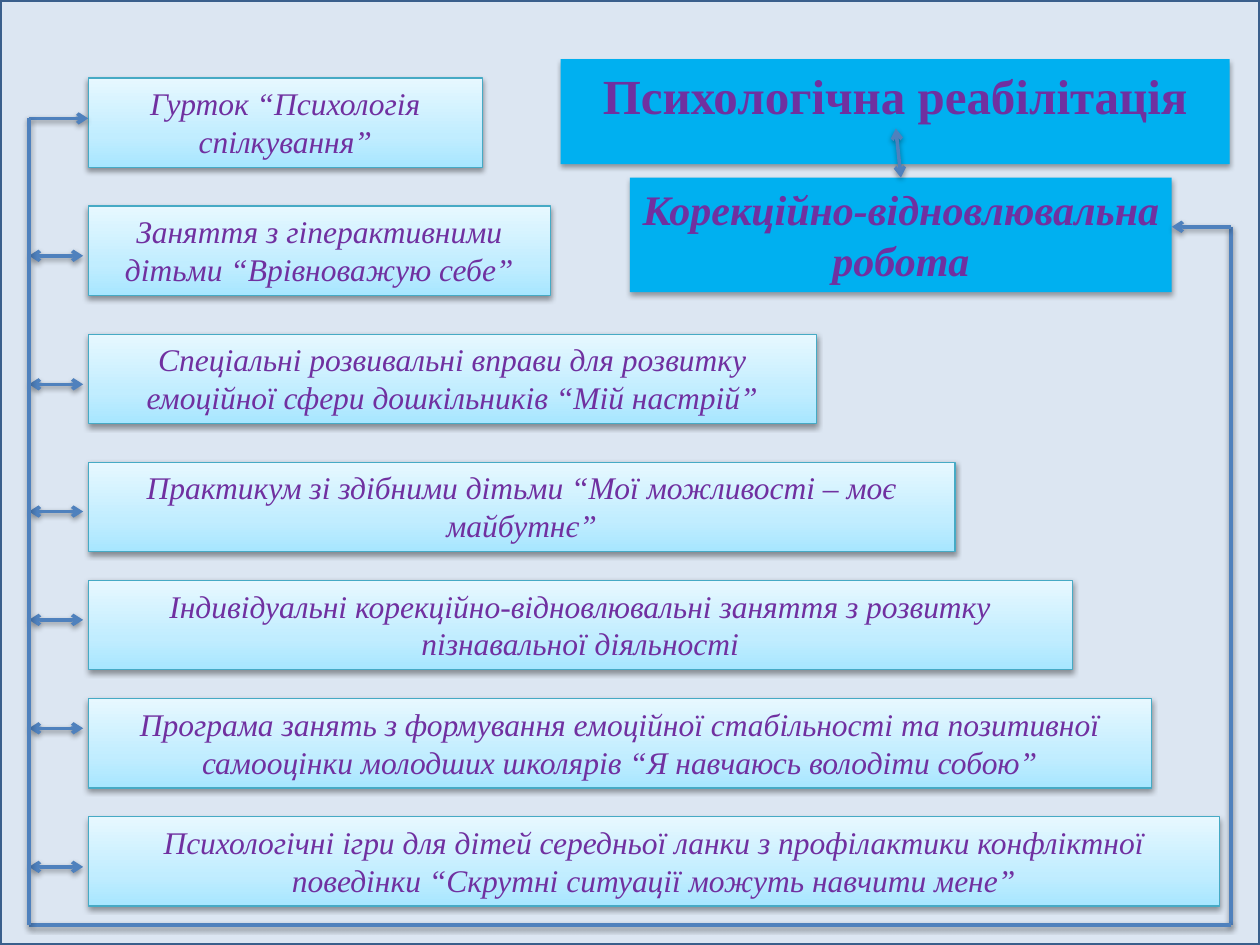
from copy import deepcopy
from dataclasses import dataclass

from lxml import etree
from pptx import Presentation
from pptx import util as u
from pptx.dml.color import RGBColor
from pptx.enum import shapes, text
from pptx.oxml.ns import qn


@dataclass(frozen=True)
class Theme:
    font: str = "Times New Roman"
    ink: str = "7030A0"
    paper: str = "DCE6F2"
    frame: str = "3A5F8C"
    heading: str = "00B0F0"
    edge: str = "46AAC5"
    arrow: str = "4F81BD"
    gradient: tuple = ((0, "A7E6FF"), (0.35, "C1EDFF"), (1, "E7F8FF"))
    title_size: int = 28
    subtitle_size: int = 24
    body_size: int = 18
    line_width: float = 2
    edge_width: float = 0.75


THEME = Theme()
COLUMNS, ROWS = 100, 75
CARD_LEFT, CARD_HEIGHT = 7, 7.1
RAIL_LEFT, RAIL_RIGHT, RAIL_BOTTOM = 2.3, 97.7, 73.4
ARROW_END = 6.6
FIRST_ROW, WIDE_STEP, NARROW_STEP = 6.2, 10.16, 9.38
WIDE_STEPS = 3

ACTIVITIES = [
    (31.3, 9.4, "Гурток “Психологія спілкування”"),
    (36.7, 20.3, "Заняття з гіперактивними дітьми “Врівноважую себе”"),
    (57.8, 30.5, "Спеціальні розвивальні вправи для розвитку емоційної сфери дошкільників “Мій настрій”"),
    (68.8, 40.6, "Практикум зі здібними дітьми “Мої можливості – моє майбутнє”"),
    (78.1, 49.2, "Індивідуальні корекційно-відновлювальні заняття з розвитку пізнавальної діяльності"),
    (84.4, 57.8, "Програма занять з формування емоційної стабільності та позитивної самооцінки молодших школярів “Я навчаюсь володіти собою”"),
    (89.8, 68.8, "Психологічні ігри для дітей середньої ланки з профілактики конфліктної поведінки “Скрутні ситуації можуть навчити мене”"),
]


def color(value):
    return RGBColor.from_string(value)


def apply(target, values):
    for name, value in values.items():
        setattr(target, name, value)


def cell(presentation, *lengths):
    units = (presentation.slide_width / COLUMNS, presentation.slide_height / ROWS)
    return [u.Emu(round(length * units[index % 2])) for index, length in enumerate(lengths)]


def add_shadow(shape, opacity, distance):
    properties = shape._element.spPr
    for old in properties.findall(qn("a:effectLst")):
        properties.remove(old)
    effects = etree.SubElement(properties, qn("a:effectLst"))
    shadow = etree.SubElement(
        effects, qn("a:outerShdw"), blurRad=str(u.Pt(3.15)), dist=str(u.Pt(distance)),
        dir="5400000", rotWithShape="0")
    black = etree.SubElement(shadow, qn("a:srgbClr"), val="000000")
    etree.SubElement(black, qn("a:alpha"), val=str(opacity * 1000))


def fill_gradient(shape):
    shape.fill.gradient()
    shape.fill.gradient_angle = 90
    stops = shape._element.spPr.find(".//" + qn("a:gsLst"))
    stops.append(deepcopy(stops[-1]))
    for stop, (position, value) in zip(shape.fill.gradient_stops, THEME.gradient):
        stop.position = position
        stop.color.rgb = color(value)


def place(presentation, shape, box):
    apply(shape, dict(zip(("left", "top", "width", "height"), cell(presentation, *box))))


def write(shape, wording, size, bold, italic):
    frame = shape.text_frame
    frame.text = wording
    apply(frame, {"word_wrap": True, "vertical_anchor": text.MSO_ANCHOR.TOP,
                  "auto_size": text.MSO_AUTO_SIZE.SHAPE_TO_FIT_TEXT})
    paragraph = frame.paragraphs[0]
    paragraph.alignment = text.PP_ALIGN.CENTER
    font = paragraph.runs[0].font
    apply(font, {"name": THEME.font, "size": u.Pt(size), "bold": bold, "italic": italic})
    font.color.rgb = color(THEME.ink)


def add_background(presentation, slide):
    shape = slide.shapes.add_shape(
        shapes.MSO_SHAPE.RECTANGLE, *cell(presentation, 0, 0, COLUMNS, ROWS))
    shape.shadow.inherit = False
    shape.fill.solid()
    shape.fill.fore_color.rgb = color(THEME.paper)
    shape.line.color.rgb = color(THEME.frame)
    shape.line.width = u.Pt(THEME.line_width)
    slide.shapes._spTree.insert(2, shape._element)


def add_heading(presentation, shape, box, wording, size, italic):
    place(presentation, shape, box)
    shape.fill.solid()
    shape.fill.fore_color.rgb = color(THEME.heading)
    write(shape, wording, size, True, italic)
    add_shadow(shape, 35, 1.8)


def add_card(presentation, slide, box, wording):
    shape = slide.shapes.add_textbox(*cell(presentation, *box))
    fill_gradient(shape)
    shape.line.color.rgb = color(THEME.edge)
    shape.line.width = u.Pt(THEME.edge_width)
    write(shape, wording, THEME.body_size, False, True)
    add_shadow(shape, 38, 1.6)


def add_line(presentation, slide, points, ends=()):
    connector = slide.shapes.add_connector(
        shapes.MSO_CONNECTOR.STRAIGHT, *cell(presentation, *points))
    connector.line.color.rgb = color(THEME.arrow)
    connector.line.width = u.Pt(THEME.line_width)
    outline = connector._element.spPr.find(qn("a:ln"))
    for end in ends:
        etree.SubElement(outline, qn("a:" + end), type="arrow")
    add_shadow(connector, 38, 1.6)


def add_activities(presentation, slide, left, top):
    for index, (width, arrow_row, wording) in enumerate(ACTIVITIES):
        wide = min(index, WIDE_STEPS)
        row = top + wide * WIDE_STEP + (index - wide) * NARROW_STEP
        add_card(presentation, slide, (left, row, width, CARD_HEIGHT), wording)
        first = index == 0
        end = left if first else ARROW_END
        ends = ("tailEnd",) if first else ("headEnd", "tailEnd")
        add_line(presentation, slide, (RAIL_LEFT, arrow_row, end, arrow_row), ends)


def add_rail(presentation, slide, left, right, bottom):
    add_line(presentation, slide, (right, 18, right, bottom))
    add_line(presentation, slide, (right, bottom, left, bottom))
    add_line(presentation, slide, (left, 9.4, left, bottom))
    add_line(presentation, slide, (right, 18, 93, 18), ("tailEnd",))


def main():
    presentation = Presentation()
    apply(presentation, {"slide_width": u.Inches(10), "slide_height": u.Inches(7.5)})
    slide = presentation.slides.add_slide(presentation.slide_layouts[5])
    add_background(presentation, slide)
    add_heading(presentation, slide.shapes.title, (44.5, 4.7, 53.1, 5.7),
                "Психологічна реабілітація", THEME.title_size, False)
    subtitle = slide.shapes.add_textbox(0, 0, 0, 0)
    add_heading(presentation, subtitle, (50, 14.1, 43, 9.1),
                "Корекційно-відновлювальна робота", THEME.subtitle_size, True)
    add_line(presentation, slide, (71.5, 14.1, 71.1, 10.2), ("headEnd", "tailEnd"))
    add_activities(presentation, slide, CARD_LEFT, FIRST_ROW)
    add_rail(presentation, slide, RAIL_LEFT, RAIL_RIGHT, RAIL_BOTTOM)
    presentation.save("out.pptx")


if __name__ == "__main__":
    main()
